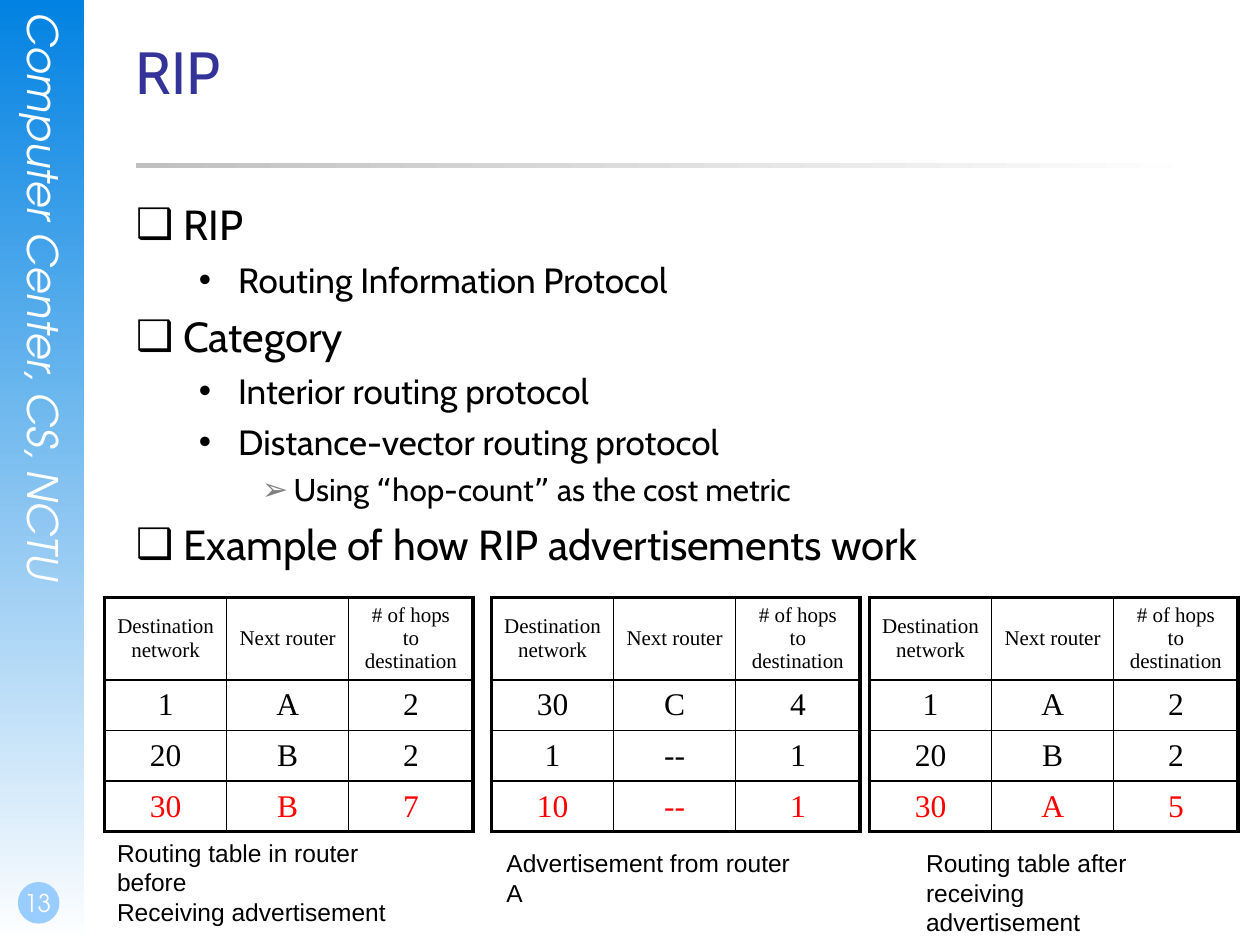
from itertools import groupby

from lxml import etree
from pptx import Presentation
from pptx import util as u
from pptx.dml import color
from pptx.enum import shapes, text
from pptx.oxml import ns

Cm = u.Cm
CENTER, LEFT = text.PP_ALIGN.CENTER, text.PP_ALIGN.LEFT
TOP, MIDDLE, BOTTOM = (text.MSO_ANCHOR.TOP, text.MSO_ANCHOR.MIDDLE,
                       text.MSO_ANCHOR.BOTTOM)

# level: (bullet, bullet colour, left indent cm, hanging cm, text size)
LEVELS = [("❑", "000000", 0.95, 0.95, 24),
          ("•", "000000", 2.06, 0.79, 20),
          ("➢", "808080", 3.18, 0.64, 18)]
ITEMS = [(0, "RIP"),
         (1, "Routing Information Protocol"),
         (0, "Category"),
         (1, "Interior routing protocol"),
         (1, "Distance-vector routing protocol"),
         (2, "Using “hop-count” as the cost metric"),
         (0, "Example of how RIP advertisements work")]

HEADER = ["Destination\nnetwork", "Next router", "# of hops to\ndestination"]
COL_WIDTHS = [2.46, 2.46, 2.51]
ROW_HEIGHTS = [1.27, 1.02, 1.02, 1.02]
TABLE_TOP = 12.04
# (table left, rows, caption box, caption paragraphs)
ROUTING_TABLES = [
    (2.11, [["1", "A", "2"], ["20", "B", "2"], ["30", "B", "7"]],
     (2.11, 16.76, 6.88, 1.45),
     ["Routing table in router before", "Receiving advertisement"]),
    (9.91, [["30", "C", "4"], ["1", "--", "1"], ["10", "--", "1"]],
     (9.96, 16.97, 6.65, 0.84),
     ["Advertisement from router A"]),
    (17.53, [["1", "A", "2"], ["20", "B", "2"], ["30", "A", "5"]],
     (18.42, 16.97, 5.72, 1.45),
     ["Routing table after", "receiving advertisement"]),
]


def rgb(value):
    return color.RGBColor.from_string(value)


def sub(parent, tag, **attrs):
    return etree.SubElement(parent, ns.qn(tag), attrs)


def write(p, words, font="Cabin", size=24, fill="000000", italic=False,
          align=LEFT):
    """Fill a paragraph; curly quotes take their own font."""
    p.alignment = align
    for i, line in enumerate(words.split("\n")):
        if i:
            p.add_line_break()
        for quoted, chars in groupby(line, lambda c: c in "“”"):
            r = p.add_run()
            r.text = "".join(chars)
            r.font.name = "DejaVu Sans" if quoted else font
            r.font.size = u.Pt(size)
            r.font.italic = italic
            r.font.color.rgb = rgb(fill)


def place(sp, box):
    sp.left, sp.top, sp.width, sp.height = map(Cm, box)


def set_frame(sp, margins=(0, 0, 0, 0), anchor=TOP):
    tf = sp.text_frame
    tf.word_wrap = True
    tf.auto_size = text.MSO_AUTO_SIZE.NONE
    tf.vertical_anchor = anchor
    (tf.margin_left, tf.margin_top,
     tf.margin_right, tf.margin_bottom) = map(Cm, margins)
    return tf


def add_text_box(slide, box, paragraphs, margins=(0, 0, 0, 0), anchor=TOP,
                 **fmt):
    tf = set_frame(slide.shapes.add_textbox(*map(Cm, box)), margins, anchor)
    for i, words in enumerate(paragraphs):
        write(tf.add_paragraph() if i else tf.paragraphs[0], words, **fmt)
    return tf


def add_plain_shape(slide, kind, box):
    sp = slide.shapes.add_shape(kind, *map(Cm, box))
    sp.shadow.inherit = False
    sp.line.fill.background()
    return sp


def add_fading_bar(slide, box, start, angle):
    sp = add_plain_shape(slide, shapes.MSO_SHAPE.RECTANGLE, box)
    sp.fill.gradient()
    sp.fill.gradient_angle = angle
    for stop, value in zip(sp.fill.gradient_stops, (start, "FFFFFF")):
        stop.color.rgb = rgb(value)


def add_sidebar(slide, x, y, w, h):
    add_fading_bar(slide, (x, y, w, h), "0282E2", 270)
    tf = add_text_box(slide, (x + 0.38, y + 0.25, 1.02, 12.98),
                      ["Computer Center, CS, NCTU"],
                      font="TeX Gyre Adventor", fill="FFFFFF", italic=True)
    tf._txBody.bodyPr.set("vert", "eaVert")
    badge = add_plain_shape(slide, shapes.MSO_SHAPE.OVAL,
                            (x + 0.36, y + h - 1.27, 0.84, 0.84))
    badge.fill.solid()
    badge.fill.fore_color.rgb = rgb("99CCFF")
    add_text_box(slide, (x, y + h - 1.7, 1.47, 1.27), ["13"],
                 margins=(0.05, 0, 0, 0.13), anchor=BOTTOM, size=14,
                 font="TeX Gyre Adventor", fill="FFFFFF", align=CENTER)


def add_heading(slide, x, y, w, h):
    place(slide.shapes.title, (x, y, w, h))
    tf = set_frame(slide.shapes.title)
    write(tf.paragraphs[0], "RIP", size=34, fill="333399")
    add_fading_bar(slide, (x, y + 2.57, w, 0.1), "C0C0C0", 0)


def set_bullet(p, char, fill, indent, hanging):
    pPr = p._p.get_or_add_pPr()
    pPr.set("marL", str(Cm(indent)))
    pPr.set("indent", str(-Cm(hanging)))
    sub(sub(pPr, "a:spcBef"), "a:spcPct", val="25000")
    sub(sub(pPr, "a:buClr"), "a:srgbClr", val=fill)
    sub(pPr, "a:buChar", char=char)


def add_outline(slide, x, y, w, h):
    body = slide.placeholders[1]
    place(body, (x, y, w, h))
    tf = set_frame(body)
    for i, (level, words) in enumerate(ITEMS):
        p = tf.add_paragraph() if i else tf.paragraphs[0]
        p.level = level
        *bullet, size = LEVELS[level]
        set_bullet(p, *bullet)
        write(p, words, size=size)


def set_borders(cell, widths):
    """Widths in points for the left, right, top and bottom edges."""
    tcPr = cell._tc.get_or_add_tcPr()
    for i, (side, width) in enumerate(zip("LRTB", widths)):
        ln = etree.Element(ns.qn(f"a:ln{side}"), w=str(u.Pt(width)))
        sub(sub(ln, "a:solidFill"), "a:srgbClr", val="000000")
        tcPr.insert(i, ln)


def add_routing_table(slide, x, y, rows):
    """Header plus rows; the last row is red and the frame is thick."""
    rows = [HEADER] + rows
    last_row, last_col = len(rows) - 1, len(HEADER) - 1
    table = slide.shapes.add_table(
        len(rows), len(HEADER), Cm(x), Cm(y),
        Cm(sum(COL_WIDTHS)), Cm(sum(ROW_HEIGHTS))).table
    table.first_row = table.horz_banding = False
    for col, width in zip(table.columns, COL_WIDTHS):
        col.width = Cm(width)
    for i, (row, height) in enumerate(zip(rows, ROW_HEIGHTS)):
        table.rows[i].height = Cm(height)
        for j, words in enumerate(row):
            cell = table.cell(i, j)
            cell.vertical_anchor = MIDDLE
            cell.fill.background()
            outer = (j == 0, j == last_col, i == 0, i == last_row)
            set_borders(cell, [2.25 if edge else 1 for edge in outer])
            write(cell.text_frame.paragraphs[0], words,
                  font="Times New Roman", size=18 if i else 12,
                  fill="FF0000" if i == last_row else "000000", align=CENTER)


def main():
    prs = Presentation()
    prs.slide_width, prs.slide_height = Cm(25.4), Cm(19.05)
    slide = prs.slides.add_slide(prs.slide_layouts[1])
    add_sidebar(slide, 0, 0, 1.7, 19.05)
    add_heading(slide, 2.74, 0.71, 21.59, 3.18)
    add_outline(slide, 2.74, 4.01, 21.59, 12.9)
    for left, rows, caption_box, caption in ROUTING_TABLES:
        add_routing_table(slide, left, TABLE_TOP, rows)
        add_text_box(slide, caption_box, caption, font="Arial", size=14,
                     margins=(0.25, 0.13, 0.25, 0.13))
    prs.save("out.pptx")


if __name__ == "__main__":
    main()
